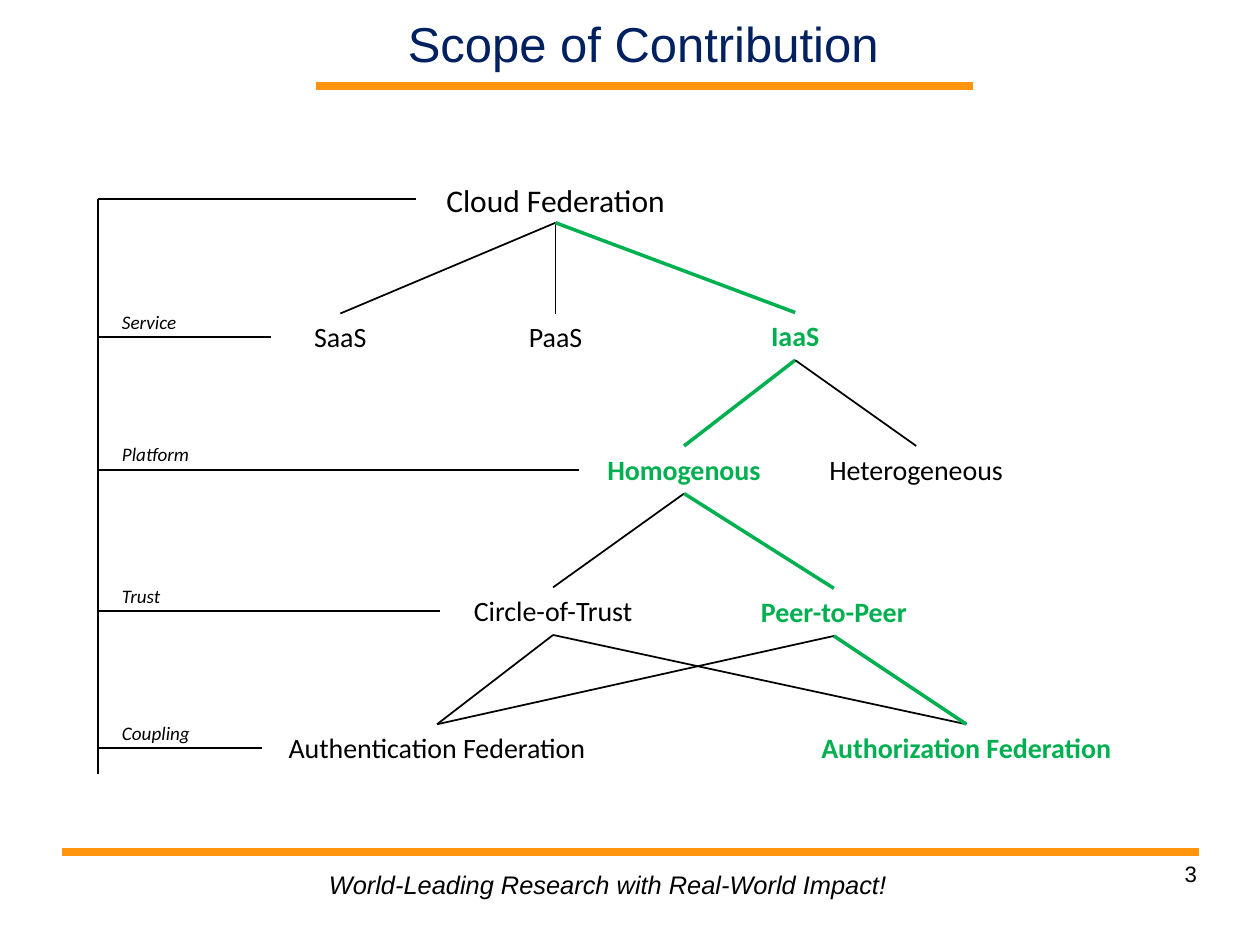
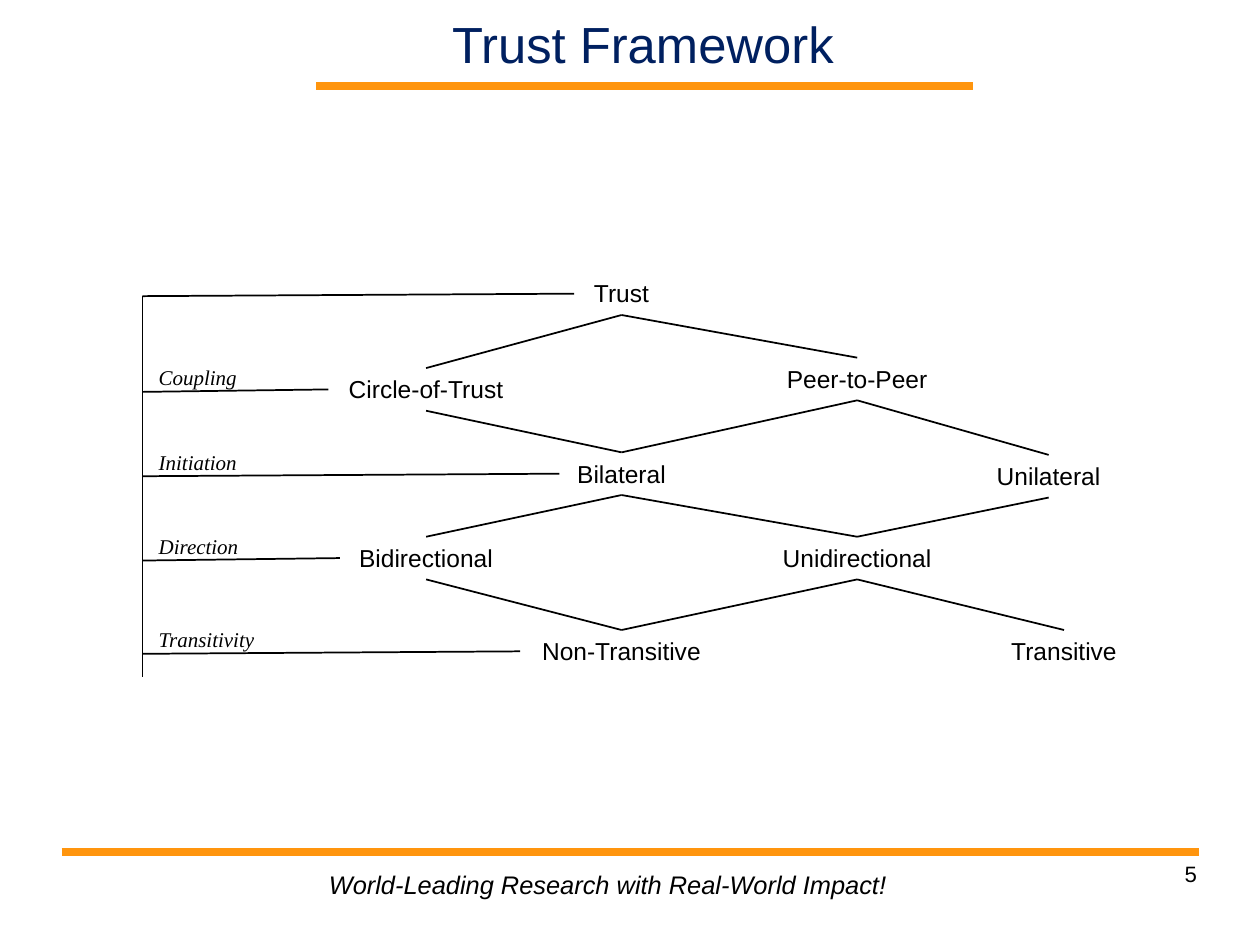
from dataclasses import dataclass
from lxml import etree
from pptx import Presentation
from pptx.dml.color import RGBColor
from pptx.enum.shapes import MSO_CONNECTOR
from pptx.enum.text import MSO_ANCHOR, MSO_AUTO_SIZE, PP_ALIGN
from pptx.oxml.ns import qn
from pptx.util import Cm, Pt

LEFT, MID, RIGHT = PP_ALIGN.LEFT, PP_ALIGN.CENTER, PP_ALIGN.RIGHT
TOP, CENTER = MSO_ANCHOR.TOP, MSO_ANCHOR.MIDDLE
NO_FIT = MSO_AUTO_SIZE.NONE
STRAIGHT = MSO_CONNECTOR.STRAIGHT


@dataclass(frozen=True)
class Theme:
    ink: str = "000000"
    navy: str = "002060"
    band: str = "FF950E"
    hot: str = "00B050"
    sans: str = "Arial"
    motto: float = 14.5
    number: float = 12.7
    band_line: float = 4.31
    edge_line: float = 1
    hot_line: float = 2


THEME = Theme()
MOTTO = "World-Leading Research with Real-World Impact!"
PAD = 0.25  # side inset of a text box, cm

# Lengths are in cm. A node is name: (centre, top, width).
# A level is (label, node its line points to, gap before that node).
SCOPE = {
    "title": "Scope of Contribution", "title_size": 28, "number": "3",
    "font": "Calibri", "size": 16, "root_size": 18, "height": 0.96,
    "label_font": "Calibri", "label_size": 10.9, "label_width": 2,
    "label_left": 2.21, "spine": 1.98, "foot": 15.6, "drop": 0, "line": 1.25,
    "nodes": {
        "Cloud Federation": (11.2, 3.53, 5.03),
        "SaaS": (6.86, 6.32, 1.98),
        "PaaS": (11.2, 6.32, 1.73),
        "IaaS": (16.03, 6.3, 1.73),
        "Homogenous": (13.79, 8.99, 3.78),
        "Heterogeneous": (18.47, 8.99, 4.14),
        "Circle-of-Trust": (11.15, 11.84, 3.94),
        "Peer-to-Peer": (16.81, 11.86, 6.07),
        "Authentication Federation": (8.81, 14.6, 6.78),
        "Authorization Federation": (19.48, 14.6, 6.4),
    },
    "path": ["Cloud Federation", "IaaS", "Homogenous", "Peer-to-Peer",
             "Authorization Federation"],
    "edges": {
        "Cloud Federation": ["SaaS", "PaaS", "IaaS"],
        "IaaS": ["Homogenous", "Heterogeneous"],
        "Homogenous": ["Circle-of-Trust", "Peer-to-Peer"],
        "Circle-of-Trust": ["Authentication Federation",
                            "Authorization Federation"],
        "Peer-to-Peer": ["Authentication Federation",
                         "Authorization Federation"],
    },
    "levels": [
        ("", "Cloud Federation", 0.3),
        ("Service", "SaaS", 0.41),
        ("Platform", "Homogenous", 0.23),
        ("Trust", "Circle-of-Trust", 0.3),
        ("Coupling", "Authentication Federation", 0.13),
    ],
}

TRUST = {
    "title": "Trust Framework", "title_size": 29, "number": "5",
    "font": "Arial", "size": 14, "root_size": 14, "height": 0.86,
    "label_font": "Times New Roman", "label_size": 12, "label_width": 2.8,
    "label_left": 2.95, "spine": 2.87, "foot": 13.64, "drop": 0.05, "line": 1,
    "nodes": {
        "Trust": (12.53, 5.49, 1.91),
        "Circle-of-Trust": (8.59, 7.42, 3.94),
        "Peer-to-Peer": (17.28, 7.21, 3.43),
        "Bilateral": (12.53, 9.12, 2.51),
        "Unilateral": (21.14, 9.17, 3.78),
        "Bidirectional": (8.59, 10.82, 3.48),
        "Unidirectional": (17.28, 10.82, 3.94),
        "Non-Transitive": (12.53, 12.7, 4.09),
        "Transitive": (21.45, 12.7, 2.82),
    },
    "path": [],
    "edges": {
        "Trust": ["Circle-of-Trust", "Peer-to-Peer"],
        "Circle-of-Trust": ["Bilateral"],
        "Peer-to-Peer": ["Bilateral", "Unilateral"],
        "Bilateral": ["Bidirectional", "Unidirectional"],
        "Unilateral": ["Unidirectional"],
        "Bidirectional": ["Non-Transitive"],
        "Unidirectional": ["Non-Transitive", "Transitive"],
    },
    "levels": [
        ("", "Trust", 0),
        ("Coupling", "Circle-of-Trust", 0),
        ("Initiation", "Bilateral", 0),
        ("Direction", "Bidirectional", 0),
        ("Transitivity", "Non-Transitive", 0),
    ],
}


def write(slide, text, box, size, *, shape=None, font=THEME.sans,
          color=THEME.ink, bold=False, italic=False, align=LEFT,
          anchor=TOP, pad=PAD):
    """Put formatted text in a placeholder, or in a new text box."""
    place = [Cm(n) for n in box]
    shape = shape or slide.shapes.add_textbox(*place)
    shape.left, shape.top, shape.width, shape.height = place
    frame = shape.text_frame
    frame.word_wrap = True
    frame.auto_size = NO_FIT
    frame.vertical_anchor = anchor
    frame.margin_left = frame.margin_right = Cm(pad)
    frame.margin_top = frame.margin_bottom = Cm(pad / 2)
    para = frame.paragraphs[0]
    para.alignment = align
    run = para.add_run()
    run.text = text
    style = run.font
    style.name, style.size = font, Pt(size)
    style.bold, style.italic = bold, italic
    style.color.rgb = RGBColor.from_string(color)


def rule(slide, start, end, width, color=THEME.ink):
    line = slide.shapes.add_connector(STRAIGHT, *[Cm(n) for n in start + end])
    line.line.width = Pt(width)
    line.line.color.rgb = RGBColor.from_string(color)
    etree.SubElement(line._element.spPr, qn("a:effectLst"))


def frame_slide(deck, data):
    """Add a slide with its title, orange bands and footer."""
    slide = deck.slides.add_slide(deck.slide_layouts[5])
    for left, right, y in [(6.38, 19.61, 1.73), (1.24, 24.18, 17.17)]:
        rule(slide, (left, y), (right, y), THEME.band_line, THEME.band)
    write(slide, data["title"], (5.56, 0, 14.81, 1.73), data["title_size"],
          shape=slide.shapes.title, color=THEME.navy, align=MID,
          anchor=CENTER, pad=0)
    write(slide, data["number"], (18.21, 17.35, 5.92, 1.3), THEME.number,
          align=RIGHT, pad=0)
    write(slide, MOTTO, (6.38, 17.4, 12.2, 0.89), THEME.motto, italic=True)
    return slide


def draw_levels(slide, data):
    """Draw the upright spine and the labelled line of each level."""
    spine, nodes = data["spine"], data["nodes"]
    for i, (label, name, gap) in enumerate(data["levels"]):
        x, top, width = nodes[name]
        y = top + data["height"] / 2
        base = y + data["drop"]
        rule(slide, (spine, base), (x - width / 2 - gap, y), data["line"])
        if i == 0:
            rule(slide, (spine, base), (spine, data["foot"]), data["line"])
        if label:
            box = data["label_left"], base - 0.67, data["label_width"], 0.72
            write(slide, label, box, data["label_size"],
                  font=data["label_font"], italic=True)


def draw_tree(slide, data):
    nodes, path, high = data["nodes"], data["path"], data["height"]
    for up, kids in data["edges"].items():
        for kid in kids:
            hot = up in path and kid in path
            start = nodes[up][0], nodes[up][1] + high
            rule(slide, start, nodes[kid][:2],
                 THEME.hot_line if hot else THEME.edge_line,
                 THEME.hot if hot else THEME.ink)
    for i, (name, (x, top, width)) in enumerate(nodes.items()):
        hot = i > 0 and name in path
        write(slide, name, (x - width / 2, top, width, high),
              data["size"] if i else data["root_size"], font=data["font"],
              color=THEME.hot if hot else THEME.ink, bold=hot, align=MID)


def main():
    deck = Presentation()
    deck.slide_width, deck.slide_height = Cm(25.4), Cm(19.05)
    for data in (SCOPE, TRUST):
        slide = frame_slide(deck, data)
        draw_levels(slide, data)
        draw_tree(slide, data)
    deck.save("out.pptx")


if __name__ == "__main__":
    main()
